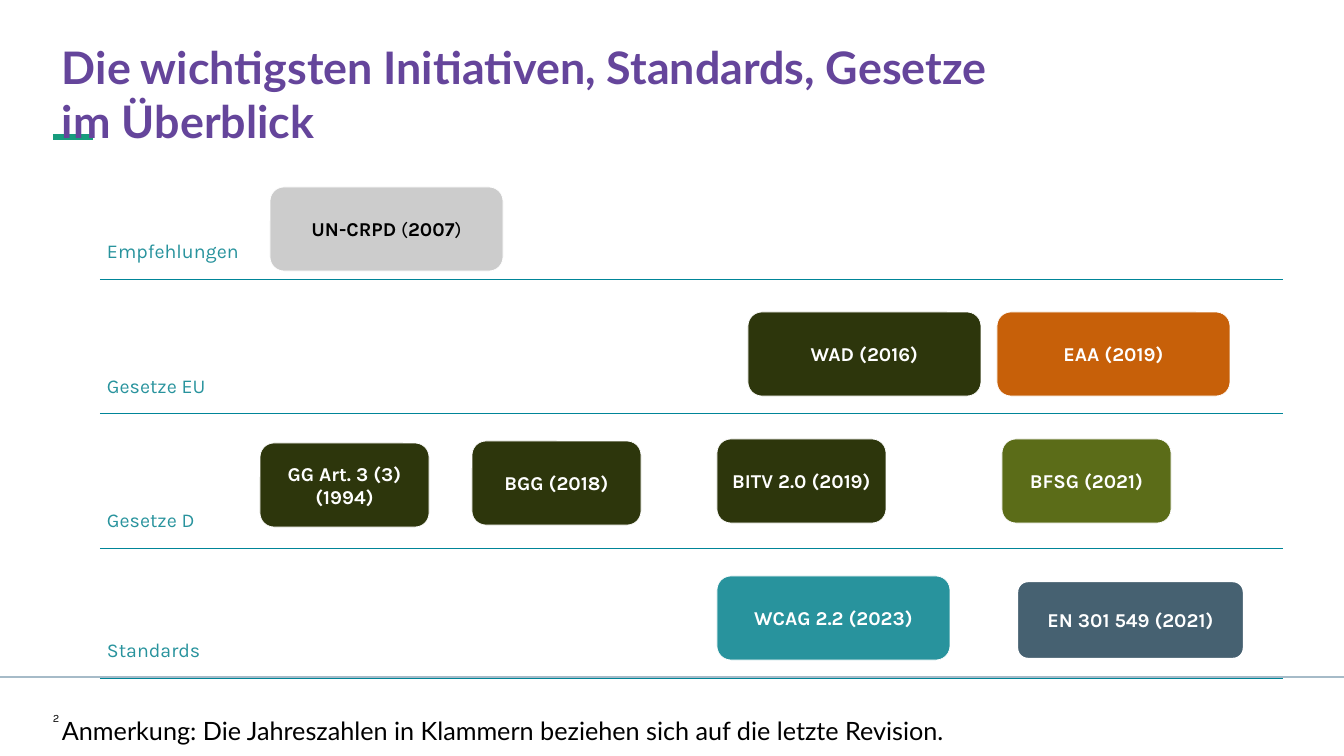
from pptx import Presentation
from pptx.dml.color import RGBColor
from pptx.enum.shapes import MSO_CONNECTOR, MSO_SHAPE
from pptx.enum.text import MSO_ANCHOR, PP_ALIGN
from pptx.oxml.ns import qn
from pptx.util import Pt
from lxml import etree

STRAIGHT = MSO_CONNECTOR.STRAIGHT
ROUNDED = MSO_SHAPE.ROUNDED_RECTANGLE
TOP, MIDDLE, BOTTOM = MSO_ANCHOR.TOP, MSO_ANCHOR.MIDDLE, MSO_ANCHOR.BOTTOM
CENTER = PP_ALIGN.CENTER

PX = 914400 / 100.8
TEAL, OLIVE, WHITE, BLACK = "28939D", "2D360C", "FFFFFF", "000000"


def color(code):
    return RGBColor.from_string(code)


def add_text(area, text, size, font, code, anchor=TOP, inset=0, bold=False):
    box = page.shapes.add_textbox(*[round(v * PX) for v in area])
    frame = box.text_frame
    frame.word_wrap = True
    frame.vertical_anchor = anchor
    frame.margin_left = frame.margin_right = round(inset * PX)
    frame.margin_top = frame.margin_bottom = round(inset / 2 * PX)
    para = frame.paragraphs[0]
    para.text = text
    for span in para.runs:
        span.font.size = Pt(size)
        span.font.name = font
        span.font.bold = bold
        span.font.color.rgb = color(code)
    return para


deck = Presentation()
deck.slide_width, deck.slide_height = round(1344 * PX), round(756 * PX)
page = deck.slides.add_slide(deck.slide_layouts[6])

# Accent, footer rule and the base lines of the four rows: left, right, y
rules = [(53, 93, 137, "179C7D", 4), (0, 1344, 677, "A6BBC8", 1.5)]
rules += [(100, 1283, y, "008598", 0.5) for y in (279, 413, 548, 678)]
for left, right, y, code, width in rules:
    rule = page.shapes.add_connector(
        STRAIGHT, *[round(v * PX) for v in (left, y, right, y)])
    rule.line.color.rgb = color(code)
    rule.line.width = Pt(width)
    etree.SubElement(rule.element.spPr, qn("a:effectLst"))

# Title
add_text((62, 40, 1057, 109),
         "Die wichtigsten Initiativen, Standards, Gesetze \vim Überblick",
         32, "Lato", "65459B", bold=True)

# Row labels
for label, top in (("Empfehlungen", 234), ("Gesetze EU", 369),
                   ("Gesetze D", 503), ("Standards", 633)):
    add_text((97, top, 233, 34), label, 14, "Karla", TEAL, inset=10)

# Cards: text, left, top, width, fill, text colour, outline in points
WIDE, NARROW = 233, 169
cards = [
    ("UN-CRPD (2007)", 270, 187, WIDE, "CCCCCC", BLACK, 0.5),
    ("WAD (2016)", 748, 312, WIDE, OLIVE, WHITE, 0.5),
    ("EAA (2019)", 997, 312, WIDE, "C76009", WHITE, 0.5),
    ("GG Art. 3 (3) (1994)", 260, 443, NARROW, OLIVE, WHITE, 0.5),
    ("BGG (2018)", 472, 441, NARROW, OLIVE, WHITE, 0.5),
    ("BITV 2.0 (2019)", 717, 439, NARROW, OLIVE, WHITE, 0.5),
    ("BFSG (2021)", 1002, 439, NARROW, "5B6C18", WHITE, 0.5),
    ("WCAG 2.2 (2023)", 717, 576, WIDE, TEAL, WHITE, 0.5),
    ("EN 301 549 (2021)", 1014, 578, WIDE, "466171", WHITE, 6),
]
for text, left, top, width, fill, ink, outline in cards:
    card = page.shapes.add_shape(
        ROUNDED, *[round(v * PX) for v in (left, top, width, 84)])
    card.shadow.inherit = False
    card.fill.solid()
    card.fill.fore_color.rgb = color(fill)
    card.line.color.rgb = color(WHITE)
    card.line.width = Pt(outline)
    card.text_frame.word_wrap = True
    card.text_frame.vertical_anchor = MIDDLE
    para = card.text_frame.paragraphs[0]
    para.alignment = CENTER
    # The brackets on the grey card are not bold
    pieces = ["UN-CRPD", " (", "2007", ")"] if ink == BLACK else [text]
    for number, piece in enumerate(pieces):
        span = para.add_run()
        span.text = piece
        span.font.size = Pt(14)
        span.font.name = "Karla"
        span.font.bold = number % 2 == 0
        span.font.color.rgb = color(ink)

# Note and slide number
note = add_text((62, 705, 1220, 41),
                "Anmerkung: Die Jahreszahlen in Klammern beziehen sich "
                "auf die letzte Revision.", 18, "Lato", BLACK, BOTTOM)
note.line_spacing = 1.1
note.space_after = Pt(19)
add_text((53, 712, 80, 13), "2", 8, "Karla", BLACK, MIDDLE)

deck.save("out.pptx")
